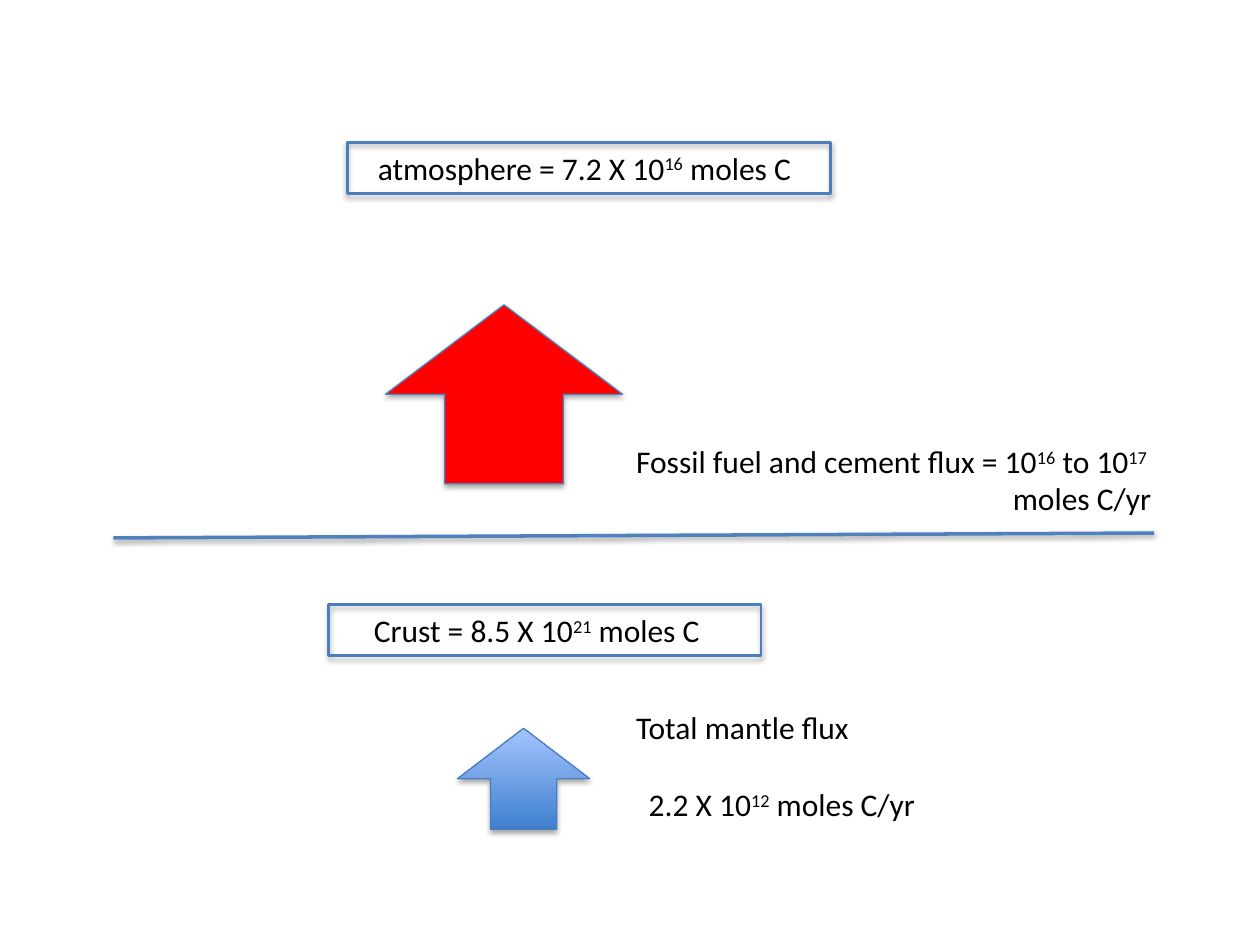
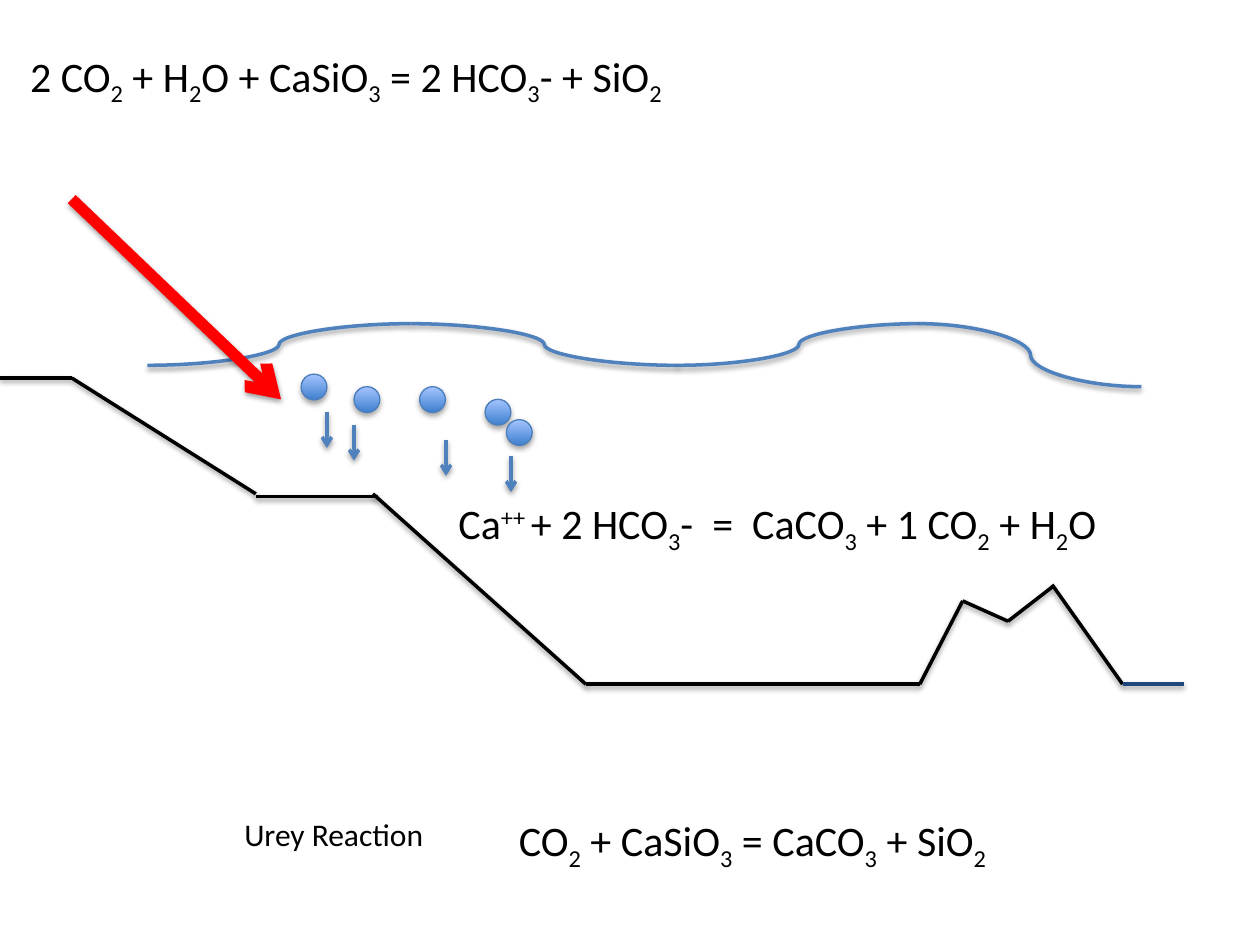
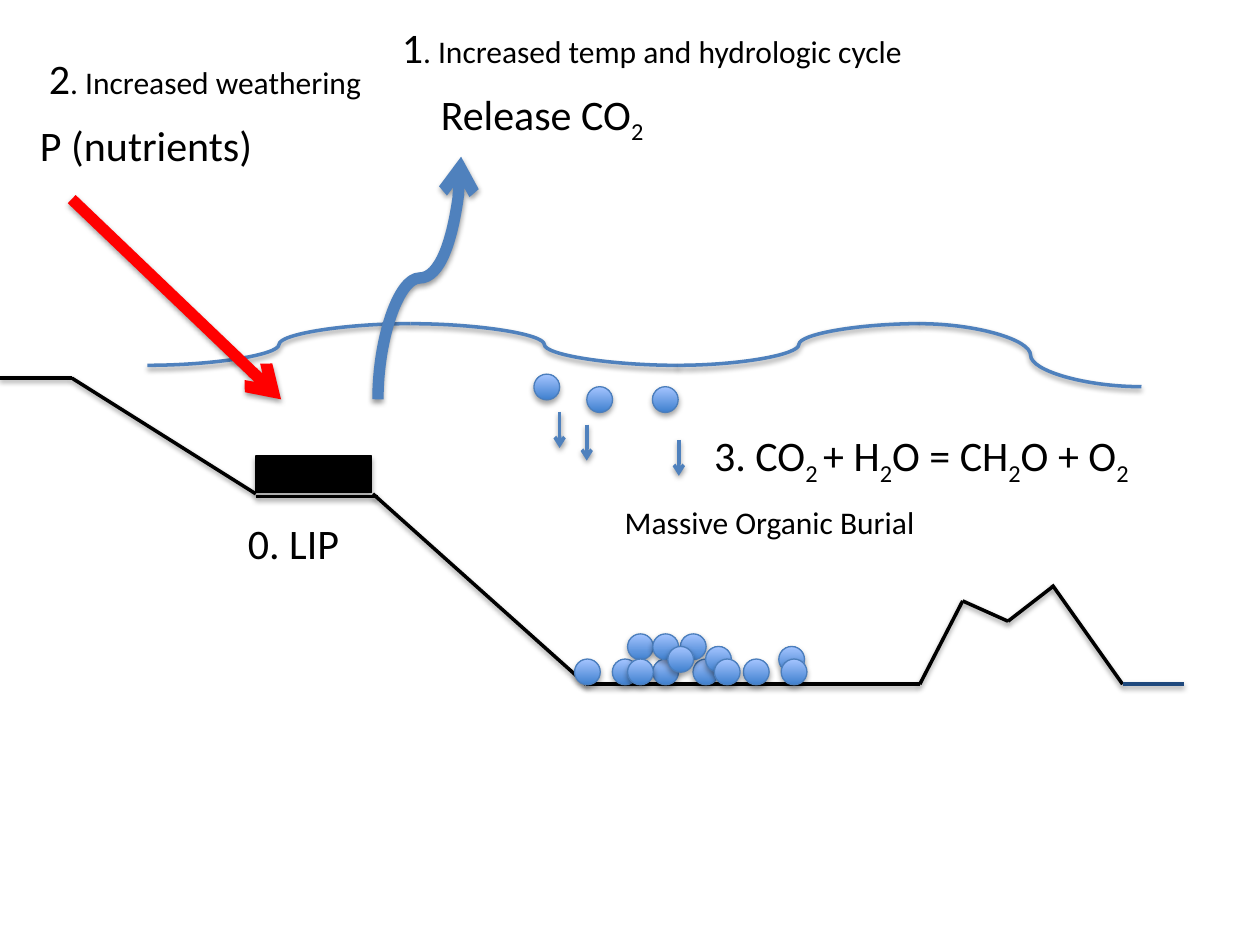
from dataclasses import dataclass
from itertools import pairwise

from pptx import Presentation
from pptx.dml.color import RGBColor
from pptx.enum.shapes import MSO_CONNECTOR, MSO_SHAPE
from pptx.enum.text import MSO_AUTO_SIZE
from pptx.oxml import parse_xml
from pptx.oxml.ns import nsdecls, qn
from pptx.util import Pt


@dataclass(frozen=True)
class Theme:
    font: str = "Calibri"
    body: float = 18
    formula: float = 24
    black: str = "000000"
    red: str = "FF0000"
    blue: str = "4F81BD"
    edge: str = "4B7EBC"
    navy: str = "1F497D"
    gradient: tuple = ("3F80CE", "A4C4FF")
    thin: float = 0.75
    frame: float = 1.5
    stroke: float = 2
    flow: float = 6.5
    shape_shadow: tuple = (35, 1.8)
    line_shadow: tuple = (38, 1.6)


THEME = Theme()
BALL = 14.7
DROP = 20.6
BURIAL_SHIFT = 133
SEABED, LAYER = 376.6, 7.2

# Text: left, top, width, size, content.
# "|" parts the spans; a span opening with ^ is raised, _ lowered, # body size.
RESERVOIR_TEXT = [
    (206.6, 345.6, 210, THEME.body, "Crust = 8.5 X 10|^21| moles C"),
    (363.6, 445, 176.4, THEME.body, "2.2 X 10|^12| moles C/yr"),
    (356.4, 401, 137.5, THEME.body, "Total mantle flux"),
    (208.8, 81.4, 254.9, THEME.body, "atmosphere = 7.2 X 10|^16| moles C"),
    (356.4, 249.1, 324.7, THEME.body,
     "Fossil fuel and cement flux = 10|^16| to 10|^17"),
    (571.7, 270, 94.3, THEME.body, "moles C/yr"),
]
RESERVOIR_FRAMES = [(187.9, 345.6, 247, 29.1), (198.7, 81.4, 275.8, 29.1)]
MANTLE_ARROW = (261.4, 416.2, 75.6, 57.6)
FOSSIL_ARROW = (220.3, 174.2, 135.4, 102.2)
SURFACE = [(64.8, 307.4), (659.5, 304.6)]

WATER = [(84.2, 208.8), (234.7, 185), (387.4, 208.8), (525.6, 185), (652.3, 221)]
GROUND = [
    [(0, 216), (41, 216), (146.2, 282.2)],
    [(146.2, 283.7), (216, 283.7)],
    [(213.1, 282.2), (334.8, 391), (525.6, 391), (550.1, 343.4),
     (576, 355), (601.2, 335.5)],
    [(601.2, 334.1), (641.5, 391)],
]
FAR_SEABED = [(641.5, 391), (676.8, 391)]
RUNOFF = [(41, 113.8), (160.6, 228.2)]

SINKING_BALLS = [(172.1, 213.8), (202.3, 221), (239.8, 221),
                 (277.2, 228.2), (289.4, 239.8)]
SINKING_ARROWS = [(186.8, 235.4), (202.3, 242.6), (254.9, 251.3), (292, 260.6)]

WEATHERING_TEXT = [
    (10.1, 25.2, 388, THEME.formula,
     "2 CO|_2| + H|_2|O + CaSiO|_3| = 2 HCO|_3|- + SiO|_2"),
    (254.9, 280.8, 389.5, THEME.formula,
     "Ca|^++ |+ 2 HCO|_3|-  =  CaCO|_3| + 1 CO|_2| + H|_2|O"),
    (132.5, 462.2, 118, THEME.body, "Urey Reaction"),
    (289.4, 462.2, 292.3, THEME.formula, "CO|_2| + CaSiO|_3| = CaCO|_3| + SiO|_2"),
]

BURIAL_TEXT = [
    (401, 241.9, 260, THEME.formula, "3. CO|_2 |+ H|_2|O = CH|_2|O + O|_2"),
    (349.9, 283.7, 181.4, THEME.body, "Massive Organic Burial"),
    (15.8, 64.8, 136.8, THEME.formula, "P (nutrients)"),
    (134.6, 292.3, 67, THEME.formula, "0. LIP"),
    (244.8, 46.8, 136.8, THEME.formula, "Release CO|_2"),
    (222.5, 8.6, 303.1, THEME.formula, "1|#. Increased temp and hydrologic cycle"),
    (20.9, 26.6, 194.4, THEME.formula, "2|#. Increased weathering"),
]
# Buried balls: left, layer above the seabed.
BURIED = [(349.9, 0), (373, 0), (396, 0), (424.8, 0), (388.8, 2), (403.2, 1),
          (358.6, 2), (373, 2), (445, 1), (358.6, 0), (381.6, 1), (408.2, 0),
          (446.4, 0), (328.3, 0)]
LAVA = (146.2, 260.6, 66.2, 20.9)
RELEASE = [(216, 228.2), (263.5, 89.6)]


def assign(target, **values):
    for name, value in values.items():
        setattr(target, name, value)


def rgb(colour):
    return RGBColor.from_string(colour)


def points(*lengths):
    return [Pt(length) for length in lengths]


def add_shadow(item, shadow):
    opacity, distance = shadow
    properties = item._element.spPr
    for effects in properties.findall(qn("a:effectLst")):
        properties.remove(effects)
    properties.append(parse_xml(
        f'<a:effectLst {nsdecls("a")}><a:outerShdw blurRad="{Pt(3.1)}" '
        f'dist="{Pt(distance)}" dir="5400000" rotWithShape="0">'
        f'<a:srgbClr val="000000"><a:alpha val="{opacity * 1000}"/></a:srgbClr>'
        '</a:outerShdw></a:effectLst>'))


def add_text(page, left, top, width, size, content):
    height = 29.1 if size == THEME.body else 36.4
    box = page.shapes.add_textbox(*points(left, top, width, height))
    assign(box.text_frame, word_wrap=False, auto_size=MSO_AUTO_SIZE.SHAPE_TO_FIT_TEXT)
    para = box.text_frame.paragraphs[0]
    for part in content.split("|"):
        mark = part[0] if part[0] in "^_#" else ""
        span = para.add_run()
        span.text = part.removeprefix(mark)
        assign(span.font, name=THEME.font, size=Pt(THEME.body if mark == "#" else size))
        span.font.color.rgb = rgb(THEME.black)
        if mark in ("^", "_"):
            span.font._element.set("baseline", "30000" if mark == "^" else "-25000")


def add_figure(page, kind, place, fill=None, edge=THEME.edge, weight=THEME.thin):
    """Add a preset shape; fill is a colour, a pair for a gradient, or None."""
    figure = page.shapes.add_shape(kind, *points(*place))
    if fill is None:
        figure.fill.background()
    elif isinstance(fill, tuple):
        figure.fill.gradient()
        figure.fill.gradient_angle = 90
        for stop, colour in zip(figure.fill.gradient_stops, fill):
            stop.color.rgb = rgb(colour)
    else:
        figure.fill.solid()
        figure.fill.fore_color.rgb = rgb(fill)
    figure.line.color.rgb = rgb(edge)
    figure.line.width = Pt(weight)
    figure.shadow.inherit = False
    add_shadow(figure, THEME.shape_shadow)


def add_line(page, begin, end, colour=THEME.black, weight=THEME.stroke,
             kind=MSO_CONNECTOR.STRAIGHT, arrow=False):
    line = page.shapes.add_connector(kind, *points(*begin, *end))
    line.line.color.rgb = rgb(colour)
    line.line.width = Pt(weight)
    if arrow:
        line.line._get_or_add_ln().append(
            parse_xml(f'<a:tailEnd {nsdecls("a")} type="arrow"/>'))
    add_shadow(line, THEME.line_shadow)
    return line


def add_rising_curve(page, begin, end):
    """Add a curve that leaves and arrives vertically, by a quarter turn."""
    middle_x, middle_y = ((a + b) / 2 for a, b in zip(begin, end))
    turned = [(middle_x + y - middle_y, middle_y - x + middle_x)
              for x, y in (begin, end)]
    curve = add_line(page, *turned, THEME.blue, THEME.flow,
                     MSO_CONNECTOR.CURVE, arrow=True)
    curve._element.spPr.find(qn("a:xfrm")).set("rot", "5400000")


def add_ball(page, left, top):
    add_figure(page, MSO_SHAPE.OVAL, (left, top, BALL, BALL), THEME.gradient)


def add_ocean(page):
    for begin, end in pairwise(WATER):
        add_line(page, begin, end, THEME.blue, kind=MSO_CONNECTOR.CURVE)
    for outline in GROUND:
        for begin, end in pairwise(outline):
            add_line(page, begin, end)
    add_line(page, *FAR_SEABED, THEME.navy)
    add_line(page, *RUNOFF, THEME.red, THEME.flow, arrow=True)


def add_sinking(page, balls, arrows, shift=0):
    for left, top in balls:
        add_ball(page, left + shift, top)
    for x, top in arrows:
        add_line(page, (x + shift, top), (x + shift, top + DROP),
                 THEME.blue, arrow=True)


def draw_reservoirs(page):
    for frame in RESERVOIR_FRAMES:
        add_figure(page, MSO_SHAPE.RECTANGLE, frame, weight=THEME.frame)
    add_figure(page, MSO_SHAPE.UP_ARROW, MANTLE_ARROW, THEME.gradient)
    add_figure(page, MSO_SHAPE.UP_ARROW, FOSSIL_ARROW, THEME.red)
    add_line(page, *SURFACE, THEME.blue)


def draw_weathering(page):
    add_ocean(page)
    add_sinking(page, SINKING_BALLS, SINKING_ARROWS)


def draw_burial(page):
    add_ocean(page)
    add_sinking(page, SINKING_BALLS[:3], SINKING_ARROWS[:3], BURIAL_SHIFT)
    for left, layer in BURIED:
        add_ball(page, left, SEABED - layer * LAYER)
    add_figure(page, MSO_SHAPE.RECTANGLE, LAVA, THEME.black, THEME.black)
    add_rising_curve(page, *RELEASE)


def main():
    deck = Presentation()
    assign(deck, slide_width=Pt(720), slide_height=Pt(540))
    for draw, texts in [(draw_reservoirs, RESERVOIR_TEXT),
                        (draw_weathering, WEATHERING_TEXT),
                        (draw_burial, BURIAL_TEXT)]:
        page = deck.slides.add_slide(deck.slide_layouts[6])
        draw(page)
        for text in texts:
            add_text(page, *text)
    deck.save("out.pptx")


if __name__ == "__main__":
    main()
